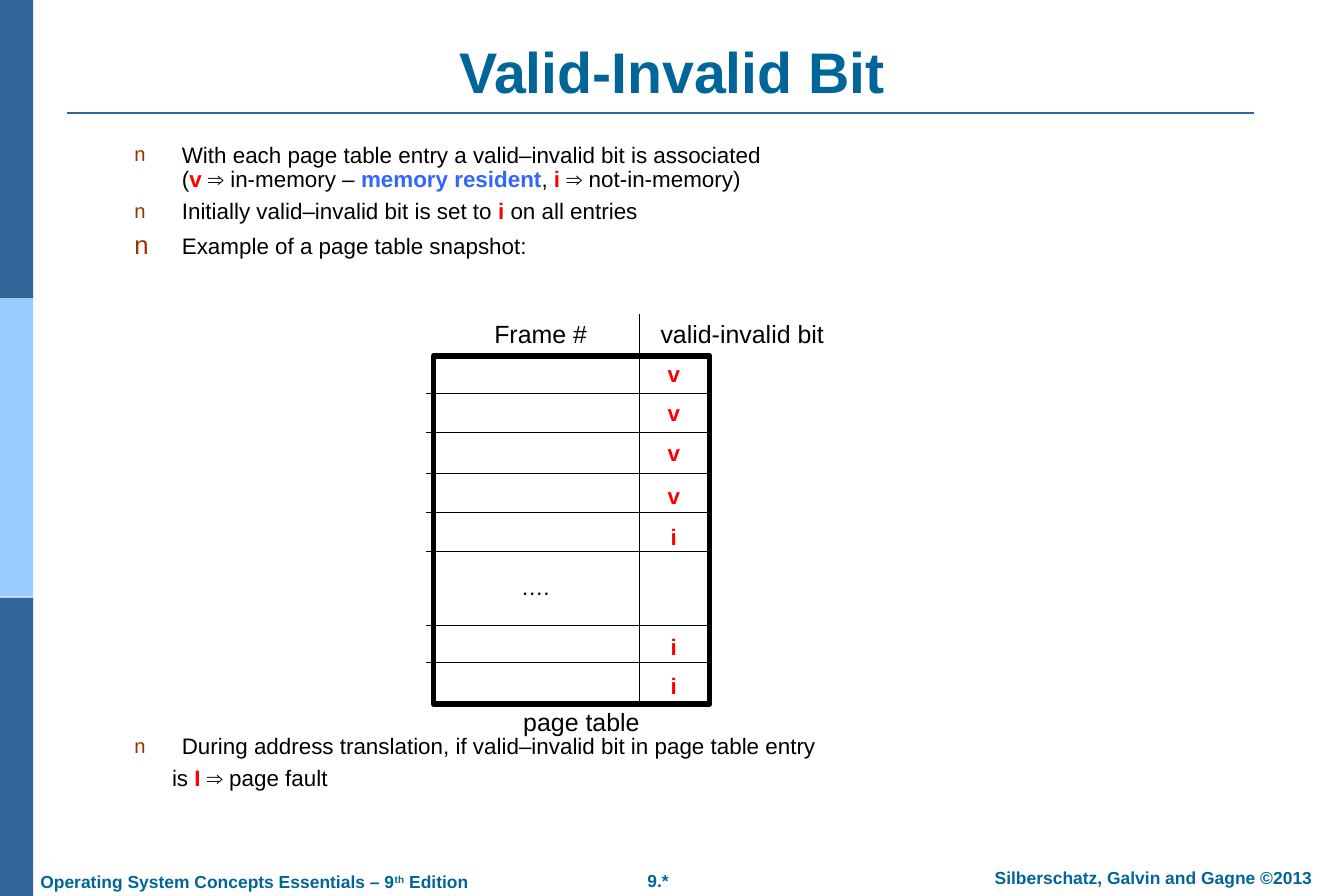
from dataclasses import dataclass

from lxml.etree import SubElement
from pptx import Presentation
from pptx.dml.color import RGBColor
from pptx.enum.shapes import MSO_CONNECTOR as Connector, MSO_SHAPE as Shape
from pptx.enum.text import MSO_ANCHOR as Anchor, PP_ALIGN as Align
from pptx.oxml.ns import qn
from pptx.slide import Slide
from pptx.text.text import _Paragraph as Para
from pptx.util import Emu, Pt

PX = 9144  # 100 px to the inch
PAGE_WIDTH, PAGE_HEIGHT = 1500, 1000
FONT = "Arial"

BLACK = RGBColor(0x00, 0x00, 0x00)
WHITE = RGBColor(0xFF, 0xFF, 0xFF)
RED = RGBColor(0xFF, 0x00, 0x00)
BLUE = RGBColor(0x33, 0x66, 0xFF)
TEAL = RGBColor(0x00, 0x66, 0x99)
NAVY = RGBColor(0x33, 0x66, 0x99)
SKY = RGBColor(0x99, 0xCC, 0xFF)
RUST = RGBColor(0x99, 0x33, 0x00)


@dataclass(frozen=True)
class Area:
    left: int
    top: int
    width: int
    height: int

    def emu(self) -> list[Emu]:
        return [Emu(n * PX) for n in (self.left, self.top, self.width, self.height)]


@dataclass(frozen=True)
class Span:
    text: str
    color: RGBColor = BLACK
    bold: bool = False
    size: int = 18
    raised: bool = False


@dataclass(frozen=True)
class Item:
    spans: list[Span]
    space_before: float = 0
    bullet_percent: int = 90
    bulleted: bool = True


@dataclass(frozen=True)
class Label:
    area: Area
    spans: list[Span]
    align: Align = Align.CENTER
    anchor: Anchor = Anchor.MIDDLE


def teal(text: str, size: int = 14, raised: bool = False) -> Span:
    return Span(text, TEAL, True, size, raised)


def red(text: str) -> Span:
    return Span(text, RED, True)


FOOTERS = [
    Label(Area(700, 964, 69, 38), [teal("9.*")], anchor=Anchor.TOP),
    Label(Area(1065, 961, 445, 38), [teal("Silberschatz, Galvin and Gagne ©2013")], anchor=Anchor.TOP),
    Label(Area(31, 965, 511, 38), [teal("Operating System Concepts Essentials – 9"),
                                   teal("th", raised=True), teal(" Edition")], Align.LEFT, Anchor.TOP),
]
TITLE = Label(Area(75, 40, 1350, 84), [teal("Valid-Invalid Bit", 46)], anchor=Anchor.BOTTOM)
TABLE_LABELS = [
    Label(Area(567, 632, 61, 45), [Span("….")]),
    Label(Area(537, 348, 133, 48), [Span("Frame #", size=20)]),
    Label(Area(722, 348, 213, 48), [Span("valid-invalid bit", size=20)]),
    Label(Area(569, 781, 160, 48), [Span("page table", size=20)]),
]
BITS = [(394, "v"), (438, "v"), (482, "v"), (530, "v"), (576, "i"), (699, "i"), (743, "i")]
ROW_LINES = [round(439 + 44.25 * row) for row in range(5)] + [698, 739]

INTRO = [
    Item([Span("With each page table entry a valid–invalid bit is associated"), Span("\n"),
          Span("("), red("v"), Span(" ⇒ in-memory – "), Span("memory resident", BLUE, True),
          Span(", "), red("i"), Span(" ⇒ not-in-memory)")]),
    Item([Span("Initially valid–invalid bit is set to"), red(" i "), Span("on all entries")], 6.3),
    Item([Span("Example of a page table snapshot:")], 8.1, 115),
]
OUTCOME = [
    Item([Span("During address translation, if valid–invalid bit in page table entry")]),
    Item([Span("is"), red(" I"), Span(" ⇒ page fault")], 6.3, bulleted=False),
]


def write_spans(para: Para, spans: list[Span]) -> None:
    for span in spans:
        if span.text == "\n":
            para.add_line_break()
            continue
        run = para.add_run()
        run.text = span.text
        run.font.color.rgb = span.color
        for name, value in {"name": FONT, "size": Pt(span.size), "bold": span.bold}.items():
            setattr(run.font, name, value)
        if span.raised:
            run.font._element.set("baseline", "30000") if hasattr(run.font, "_element") \
                else run._r.get_or_add_rPr().set("baseline", "30000")


def add_frame(page: Slide, area: Area, anchor: Anchor, wrap: bool):
    frame = page.shapes.add_textbox(*area.emu()).text_frame
    layout = {"margin_left": Emu(14 * PX), "margin_right": Emu(14 * PX), "margin_top": Emu(7 * PX),
              "margin_bottom": Emu(7 * PX), "vertical_anchor": anchor, "word_wrap": wrap}
    for name, value in layout.items():
        setattr(frame, name, value)
    return frame


def add_label(page: Slide, label: Label) -> None:
    frame = add_frame(page, label.area, label.anchor, label.align != Align.CENTER)
    para = frame.paragraphs[0]
    para.alignment = label.align
    write_spans(para, label.spans)


def set_indent(para: Para, item: Item) -> None:
    """Hang the text behind its bullet, or indent a line that has none."""
    props = para._p.get_or_add_pPr()
    margin, indent = (53, -53) if item.bulleted else (42, 0)
    props.set("marL", str(margin * PX))
    props.set("indent", str(indent * PX))
    if not item.bulleted:
        SubElement(props, qn("a:buNone"))
        return
    SubElement(SubElement(props, qn("a:buClr")), qn("a:srgbClr"), val=str(RUST))
    SubElement(props, qn("a:buSzPct"), val=str(item.bullet_percent * 1000))
    SubElement(props, qn("a:buFont"), typeface=FONT)
    SubElement(props, qn("a:buChar"), char="n")


def add_items(page: Slide, area: Area, items: list[Item]) -> None:
    frame = add_frame(page, area, Anchor.TOP, True)
    for index, item in enumerate(items):
        para = frame.add_paragraph() if index else frame.paragraphs[0]
        set_indent(para, item)
        para.line_spacing = 0.9
        para.space_before = Pt(item.space_before)
        write_spans(para, item.spans)


def add_rect(page: Slide, area: Area, fill: RGBColor, border: float = 0) -> None:
    rect = page.shapes.add_shape(Shape.RECTANGLE, *area.emu())
    rect.shadow.inherit = False
    rect.fill.solid()
    rect.fill.fore_color.rgb = fill
    if border:
        rect.line.color.rgb = BLACK
        rect.line.width = Pt(border)
    else:
        rect.line.fill.background()


def add_line(page: Slide, start: tuple[int, int], end: tuple[int, int],
             color: RGBColor = BLACK, width: float = 0.75) -> None:
    ends = [Emu(n * PX) for n in (*start, *end)]
    line = page.shapes.add_connector(Connector.STRAIGHT, *ends)
    line.line.color.rgb = color
    line.line.width = Pt(width)
    SubElement(line._element.spPr, qn("a:effectLst"))


def main() -> None:
    deck = Presentation()
    deck.slide_width, deck.slide_height = Emu(PAGE_WIDTH * PX), Emu(PAGE_HEIGHT * PX)
    page = deck.slides.add_slide(deck.slide_layouts[6])

    for index, color in enumerate((NAVY, SKY, NAVY)):
        add_rect(page, Area(0, round(index * PAGE_HEIGHT / 3), 37, 333), color)
    add_line(page, (75, 126), (1400, 126), NAVY, 1.5)
    for label in [*FOOTERS, TITLE]:
        add_label(page, label)
    add_items(page, Area(136, 154, 1276, 150), INTRO)
    add_items(page, Area(136, 814, 1276, 100), OUTCOME)

    add_rect(page, Area(484, 397, 308, 389), WHITE, 4.5)
    for top in ROW_LINES:
        add_line(page, (476, top), (789, top))
    add_line(page, (714, 350), (714, 783))
    for top, bit in BITS:
        add_label(page, Label(Area(730, top, 44, 45), [red(bit)]))
    for label in TABLE_LABELS:
        add_label(page, label)
    deck.save("out.pptx")


if __name__ == "__main__":
    main()
